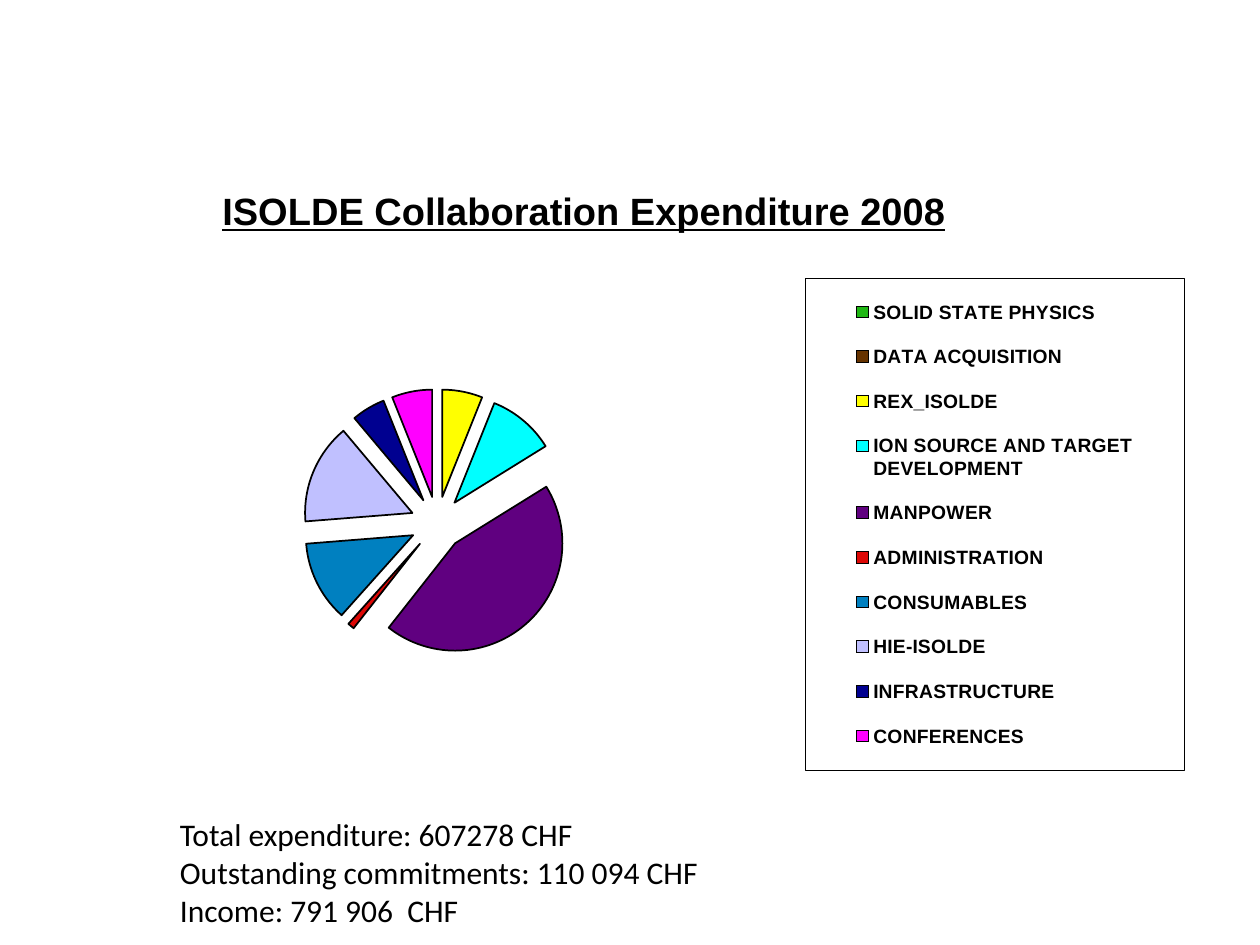
"""Build the ISOLDE 2008 expenditure slide: exploded pie chart and totals."""
from lxml import etree
from pptx import Presentation, util as u
from pptx.chart.data import CategoryChartData
from pptx.dml.color import RGBColor
from pptx.enum import chart as ec, text as et
from pptx.oxml.ns import qn

TITLE = "ISOLDE Collaboration Expenditure 2008"
HUES = {"ink": "000000", "green": "1FB714", "brown": "663300",
        "yellow": "FFFF00", "cyan": "00FFFF", "purple": "600080",
        "red": "DD0806", "blue": "0080C0", "lilac": "C0C0FF",
        "navy": "000090", "pink": "FF00FF"}
COSTS = [
    ("SOLID STATE PHYSICS", 0, "green"),
    ("DATA ACQUISITION", 0, "brown"),
    ("REX_ISOLDE", 6, "yellow"),
    ("ION SOURCE AND TARGET DEVELOPMENT", 10, "cyan"),
    ("MANPOWER", 44, "purple"),
    ("ADMINISTRATION", 1, "red"),
    ("CONSUMABLES", 12, "blue"),
    ("HIE-ISOLDE", 15, "lilac"),
    ("INFRASTRUCTURE", 5, "navy"),
    ("CONFERENCES", 6, "pink"),
]
TOTALS = ["Total expenditure: 607278 CHF",
          "Outstanding commitments: 110 094 CHF",
          "Income: 791 906  CHF"]
CHART = (0.31, 0.56, 9.39, 6.39)
NOTE = (1.33, 6.42, 4.36, 1.01)
LEGEND = (6.39, 2.21, 3.01, 3.9)
HEAD = (1.71, 1.43)
PLOT = (0.78, 3.09, 5.38, 2.13)


def hue(name):
    return RGBColor.from_string(HUES[name])


def style(font, size, face, bold=False):
    font.size, font.name, font.bold = u.Pt(size), face, bold
    font.color.rgb = hue("ink")


def edge(line, width):
    line.color.rgb = hue("ink")
    line.width = u.Pt(width)


def place(node, box, inner=False):
    """Set a manual layout from slide inches."""
    old = node.find(qn("c:layout"))
    if old is not None:
        node.remove(old)
    lay = etree.Element(qn("c:layout"))
    man = etree.SubElement(lay, qn("c:manualLayout"))
    left, top, wide, high = CHART
    rows = [("layoutTarget", "inner")] if inner else []
    rows += [("xMode", "edge"), ("yMode", "edge")]
    parts = zip("xywh", box, (left, top, 0, 0), (wide, high) * 2)
    rows += [(key, f"{(val - start) / full:.4f}")
             for key, val, start, full in parts]
    for key, val in rows:
        etree.SubElement(man, qn("c:" + key)).set("val", val)
    prior = [kid for kid in node
             if kid.tag in (qn("c:tx"), qn("c:legendPos"))]
    node.insert(node.index(prior[-1]) + 1 if prior else 0, lay)


def add_pie(slide):
    data = CategoryChartData()
    data.categories = [name for name, _, _ in COSTS]
    data.add_series("Series 1", [val for _, val, _ in COSTS])
    chart = slide.shapes.add_chart(
        ec.XL_CHART_TYPE.PIE, *map(u.Inches, CHART), data).chart
    style(chart.font, 10, "Arial")

    chart.has_title = True
    head = chart.chart_title
    head.text_frame.text = TITLE
    font = head.text_frame.paragraphs[0].runs[0].font
    style(font, 21.75, "Arial", True)
    font.underline = True

    chart.has_legend = True
    key = chart.legend
    key.position = ec.XL_LEGEND_POSITION.RIGHT
    key.include_in_layout = False
    style(key.font, 11, "Arial", True)
    frame = etree.Element(qn("c:spPr"))
    line = etree.SubElement(frame, qn("a:ln"), w=str(u.Pt(0.25)))
    fill = etree.SubElement(line, qn("a:solidFill"))
    etree.SubElement(fill, qn("a:srgbClr"), val=HUES["ink"])
    root = chart.element
    box = root.find(".//" + qn("c:legend"))
    box.find(qn("c:txPr")).addprevious(frame)

    place(root.find(".//" + qn("c:title")), HEAD)
    place(box, LEGEND)
    place(root.find(".//" + qn("c:plotArea")), PLOT, True)

    plot = chart.plots[0]
    plot.vary_by_categories = True
    pie = plot.series[0]
    edge(pie.format.line, 1)
    burst = etree.Element(qn("c:explosion"), val="25")
    root.find(".//" + qn("c:ser")).find(qn("c:spPr")).addnext(burst)
    for i, (_, _, name) in enumerate(COSTS):
        form = pie.points[i].format
        form.fill.solid()
        form.fill.fore_color.rgb = hue(name)
        edge(form.line, 1)


def add_note(slide):
    frame = slide.shapes.add_textbox(*map(u.Inches, NOTE)).text_frame
    frame.word_wrap = False
    frame.auto_size = et.MSO_AUTO_SIZE.SHAPE_TO_FIT_TEXT
    frame.text = "\n".join(TOTALS)
    for para in frame.paragraphs:
        style(para.runs[0].font, 18, "Calibri")


def main():
    deck = Presentation()
    deck.slide_width, deck.slide_height = u.Inches(10), u.Inches(7.5)
    slide = deck.slides.add_slide(deck.slide_layouts[6])
    add_pie(slide)
    add_note(slide)
    deck.save("out.pptx")


if __name__ == "__main__":
    main()
